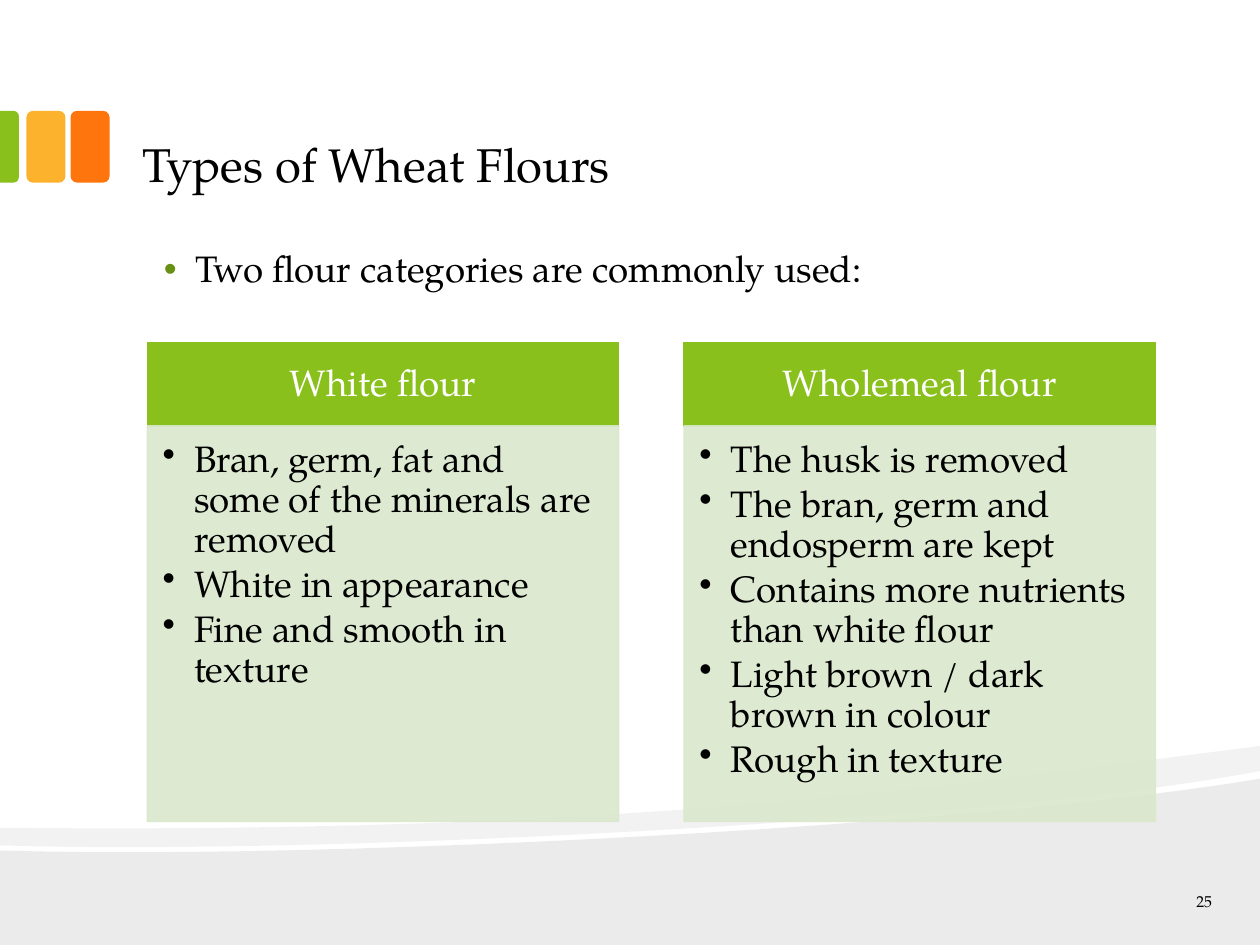
from lxml.etree import SubElement
from pptx import Presentation
from pptx.dml.color import RGBColor
from pptx.enum.shapes import MSO_SHAPE
from pptx.enum.text import MSO_ANCHOR, MSO_AUTO_SIZE, PP_ALIGN
from pptx.oxml.ns import qn
from pptx.util import Inches, Pt

FONT = "TeX Gyre Pagella"
BLACK = RGBColor(0, 0, 0)
WHITE = RGBColor(255, 255, 255)
GREEN = RGBColor(0x89, 0xC0, 0x1C)
YELLOW = RGBColor(0xFC, 0xB2, 0x2C)
ORANGE = RGBColor(0xFE, 0x75, 0x0E)
PALE_GREEN = RGBColor(0xDA, 0xE8, 0xCD)
BULLET_GREEN = RGBColor(0x67, 0x90, 0x15)

TITLE = "Types of Wheat Flours"
INTRO = "Two flour categories are commonly used:"
PAGE_NUMBER = "25"
FLOURS = [
    ("White flour", [
        "Bran, germ, fat and some of the minerals are removed",
        "White in appearance",
        "Fine and smooth in texture",
    ]),
    ("Wholemeal flour", [
        "The husk is removed",
        "The bran, germ and endosperm are kept",
        "Contains more nutrients than white flour",
        "Light brown / dark brown in colour",
        "Rough in texture",
    ]),
]
WAVES = [
    (8, [[(0, 7.5), (0, 6.75)],
         [(0, 6.75), (2.64, 6.83), (7.82, 6.55), (10, 6.18)],
         [(10, 6.18), (10, 7.5)]]),
    (5, [[(0, 6.57), (4.89, 6.62), (7.28, 6.27), (10, 5.92)],
         [(10, 5.92), (10, 6.12)],
         [(10, 6.12), (9.42, 6.23), (8.62, 6.33), (7.72, 6.41)],
         [(7.72, 6.41), (5.23, 6.63), (1.93, 6.77), (0, 6.71)]]),
]
WIDTH, HEIGHT = 10, 7.5
LEFT, CONTENT_WIDTH = 1.17, 8
COLUMN_WIDTH = 3.74
COLUMN_STEP = CONTENT_WIDTH - COLUMN_WIDTH
HEADER_TOP, HEADER_HEIGHT, LIST_HEIGHT = 2.72, 0.66, 3.14
TAB_TOP, TAB_WIDTH, TAB_HEIGHT, TAB_STEP = 0.88, 0.31, 0.57, 0.35
CURVE_STEPS = 24


def write(shape, lines, size=21, color=BLACK, align=PP_ALIGN.LEFT,
          anchor=MSO_ANCHOR.TOP, insets=(0.13, 0.07, 0.13, 0.07),
          spacing=None, before=0, after=0, bullet=False, bullet_color=None):
    frame = shape.text_frame
    frame.word_wrap = True
    frame.auto_size = MSO_AUTO_SIZE.NONE
    frame.vertical_anchor = anchor
    (frame.margin_left, frame.margin_top,
     frame.margin_right, frame.margin_bottom) = map(Inches, insets)
    for number, line in enumerate(lines):
        para = frame.add_paragraph() if number else frame.paragraphs[0]
        para.alignment = align
        para.line_spacing = spacing
        para.space_before, para.space_after = Pt(before), Pt(after)
        span = para.add_run()
        span.text = line
        span.font.name, span.font.size = FONT, Pt(size)
        span.font.color.rgb = color
        if bullet:
            properties = para._p.get_or_add_pPr()
            properties.set("marL", str(Inches(0.25)))
            properties.set("indent", str(Inches(-0.25)))
            if bullet_color is not None:
                tint = SubElement(properties, qn("a:buClr"))
                SubElement(tint, qn("a:srgbClr"), val=str(bullet_color))
            SubElement(properties, qn("a:buChar"), char="•")


def paint(shape, color, line=False, opacity=100):
    shape.shadow.inherit = False
    shape.fill.solid()
    shape.fill.fore_color.rgb = color
    if line:
        shape.line.color.rgb = color
        shape.line.width = Pt(0.85)
    else:
        shape.line.fill.background()
    if opacity < 100:
        for tint in shape.element.spPr.iter(qn("a:srgbClr")):
            SubElement(tint, qn("a:alpha"), val=str(opacity * 1000))
    return shape


def add_block(page, kind, left, top, width, height, color, **look):
    box = page.shapes.add_shape(kind, *map(Inches, (left, top, width, height)))
    return paint(box, color, **look)


def place(shape, left, top, width, height):
    shape.left, shape.top, shape.width, shape.height = map(
        Inches, (left, top, width, height))


def trace(points):
    if len(points) == 2:
        return points
    weights = (1, 3, 3, 1)
    shares = [step / CURVE_STEPS for step in range(CURVE_STEPS + 1)]
    return [tuple(sum(weight * (1 - t) ** (3 - power) * t ** power * point[axis]
                      for power, (weight, point) in enumerate(zip(weights, points)))
                  for axis in (0, 1)) for t in shares]


def add_wave(page, opacity, segments):
    outline = [(Inches(x), Inches(y)) for part in segments for x, y in trace(part)]
    builder = page.shapes.build_freeform(*outline[0])
    builder.add_line_segments(outline[1:], close=True)
    paint(builder.convert_to_shape(), BLACK, opacity=opacity)


def add_tabs(page):
    for number, color in enumerate((YELLOW, ORANGE)):
        add_block(page, MSO_SHAPE.ROUNDED_RECTANGLE, 0.21 + number * TAB_STEP,
                  TAB_TOP, TAB_WIDTH, TAB_HEIGHT, color)
    visible = 0.15
    shift = (TAB_HEIGHT - visible) / 2
    edge = add_block(page, MSO_SHAPE.ROUND_2_SAME_RECTANGLE, -shift,
                     TAB_TOP + shift, TAB_HEIGHT, visible, GREEN)
    edge.rotation = 90
    edge.adjustments[0] = 0.29


def add_flour(page, left, name, facts):
    header = add_block(page, MSO_SHAPE.RECTANGLE, left, HEADER_TOP,
                       COLUMN_WIDTH, HEADER_HEIGHT, GREEN, line=True)
    write(header, [name], color=WHITE, align=PP_ALIGN.CENTER, spacing=0.9,
          anchor=MSO_ANCHOR.MIDDLE, insets=(0.16, 0.09, 0.16, 0.09))
    panel = add_block(page, MSO_SHAPE.RECTANGLE, left, HEADER_TOP + HEADER_HEIGHT,
                      COLUMN_WIDTH, LIST_HEIGHT, PALE_GREEN, line=True, opacity=90)
    write(panel, facts, insets=(0.12, 0.12, 0.16, 0.18), spacing=0.9,
          after=3.15, bullet=True)


def main():
    deck = Presentation()
    deck.slide_width, deck.slide_height = Inches(WIDTH), Inches(HEIGHT)
    page = deck.slides.add_slide(deck.slide_layouts[1])
    title, body = page.placeholders
    place(title, 1, 0.17, CONTENT_WIDTH, 1.42)
    write(title, [TITLE], size=27, anchor=MSO_ANCHOR.BOTTOM)
    place(body, LEFT, 1.92, CONTENT_WIDTH, 5)
    write(body, [INTRO], spacing=0.9, before=13.5, bullet=True,
          bullet_color=BULLET_GREEN)
    for opacity, segments in WAVES:
        add_wave(page, opacity, segments)
    add_tabs(page)
    for number, (name, facts) in enumerate(FLOURS):
        add_flour(page, LEFT + number * COLUMN_STEP, name, facts)
    number_box = page.shapes.add_textbox(*map(Inches, (9.08, 7.05, 0.67, 0.2)))
    write(number_box, [PAGE_NUMBER], size=9, align=PP_ALIGN.RIGHT,
          anchor=MSO_ANCHOR.MIDDLE)
    deck.save("out.pptx")


if __name__ == "__main__":
    main()
